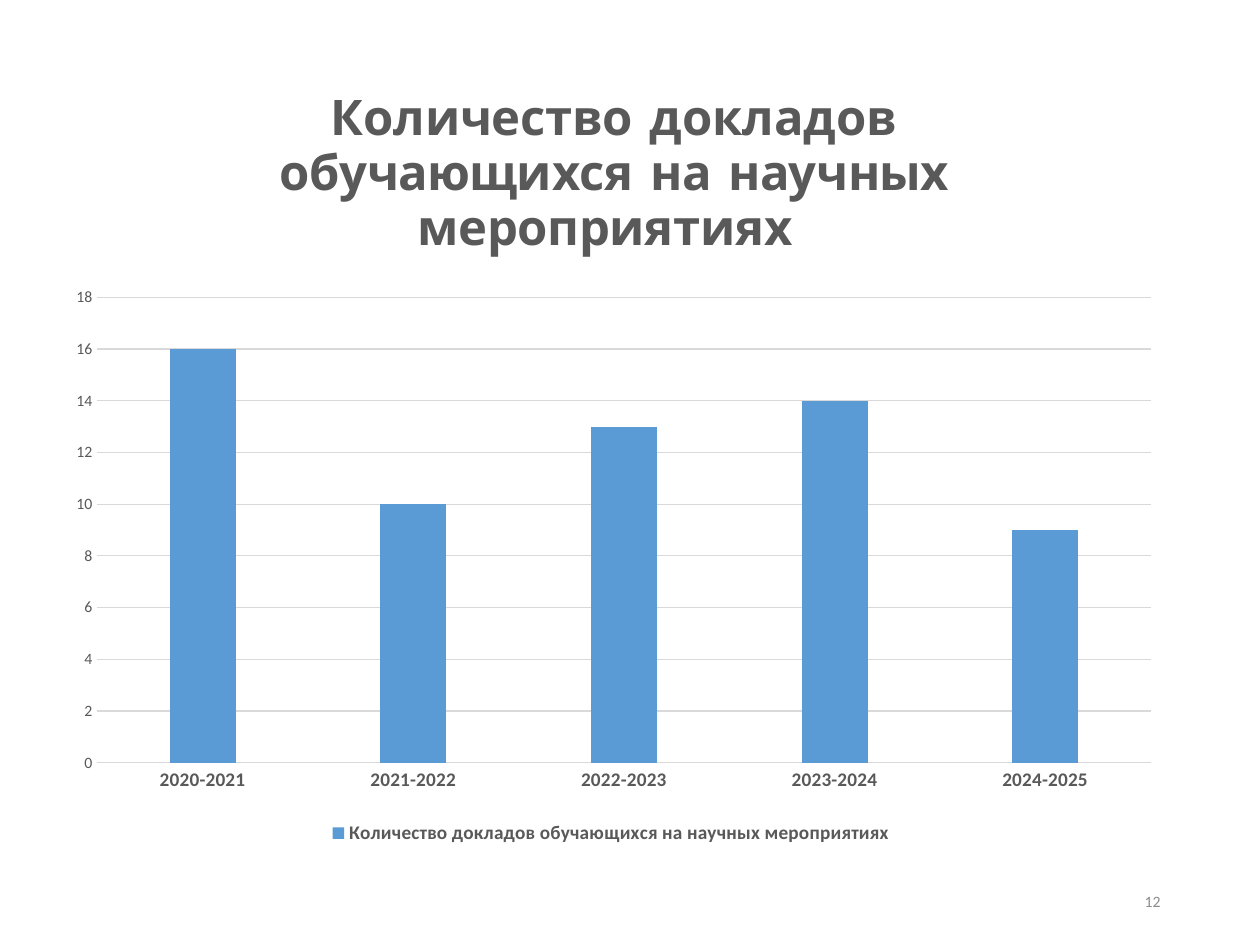
from dataclasses import dataclass

from pptx import Presentation
from pptx import util as u
from pptx.chart.data import CategoryChartData
from pptx.dml.color import RGBColor
from pptx.enum import chart as ch, text

SCALE = 914400 // 126


@dataclass(frozen=True)
class Theme:
    face: str = "Calibri"
    head: str = "Comic Neue"
    ink: str = "595959"
    grid: str = "D9D9D9"
    bar: str = "5B9BD5"
    pale: str = "8C8C8C"
    title: int = 28
    label: int = 11
    small: int = 9


THEME = Theme()
NAME = "Количество докладов обучающихся на научных мероприятиях "
TALKS = {
    "2020-2021": 16,
    "2021-2022": 10,
    "2022-2023": 13,
    "2023-2024": 14,
    "2024-2025": 9,
}


def px(*vals):
    return [u.Emu(v * SCALE) for v in vals]


def style(font, size, color=THEME.ink, bold=False, face=THEME.face):
    font.size = u.Pt(size)
    font.bold = bold
    font.name = face
    font.color.rgb = RGBColor.from_string(color)


def rule(line):
    line.color.rgb = RGBColor.from_string(THEME.grid)
    line.width = u.Pt(0.75)


def add_title(chart):
    chart.has_title = True
    frame = chart.chart_title.text_frame
    frame.text = NAME
    style(frame.paragraphs[0].runs[0].font, THEME.title, bold=True,
          face=THEME.head)


def set_axes(chart):
    years, count = chart.category_axis, chart.value_axis
    for axis in (years, count):
        axis.major_tick_mark = axis.minor_tick_mark = ch.XL_TICK_MARK.NONE
    style(years.tick_labels.font, THEME.label, bold=True)
    rule(years.format.line)
    style(count.tick_labels.font, THEME.small)
    count.format.line.fill.background()
    count.has_major_gridlines = True
    rule(count.major_gridlines.format.line)
    count.minimum_scale, count.maximum_scale, count.major_unit = 0, 18, 2


def add_bars(slide, box):
    data = CategoryChartData()
    data.categories = list(TALKS)
    data.add_series(NAME, list(TALKS.values()))
    chart = slide.shapes.add_chart(
        ch.XL_CHART_TYPE.COLUMN_CLUSTERED, *px(*box), data).chart
    style(chart.font, 10, "000000")
    add_title(chart)
    set_axes(chart)

    plot = chart.plots[0]
    plot.gap_width, plot.overlap = 219, -27
    plot.vary_by_categories = False
    fill = plot.series[0].format.fill
    fill.solid()
    fill.fore_color.rgb = RGBColor.from_string(THEME.bar)

    chart.has_legend = True
    chart.legend.position = ch.XL_LEGEND_POSITION.BOTTOM
    chart.legend.include_in_layout = False
    style(chart.legend.font, THEME.label, bold=True)


def add_number(slide, box, num):
    frame = slide.shapes.add_textbox(*px(*box)).text_frame
    frame.word_wrap = True
    frame.vertical_anchor = text.MSO_ANCHOR.MIDDLE
    frame.text = num
    para = frame.paragraphs[0]
    para.alignment = text.PP_ALIGN.RIGHT
    style(para.runs[0].font, THEME.small, THEME.pale)


def main():
    deck = Presentation()
    deck.slide_width, deck.slide_height = px(1260, 945)
    slide = deck.slides.add_slide(deck.slide_layouts[6])
    add_bars(slide, (54, 55, 1119, 795))
    add_number(slide, (890, 876, 283, 50), "12")
    deck.save("out.pptx")


if __name__ == "__main__":
    main()
